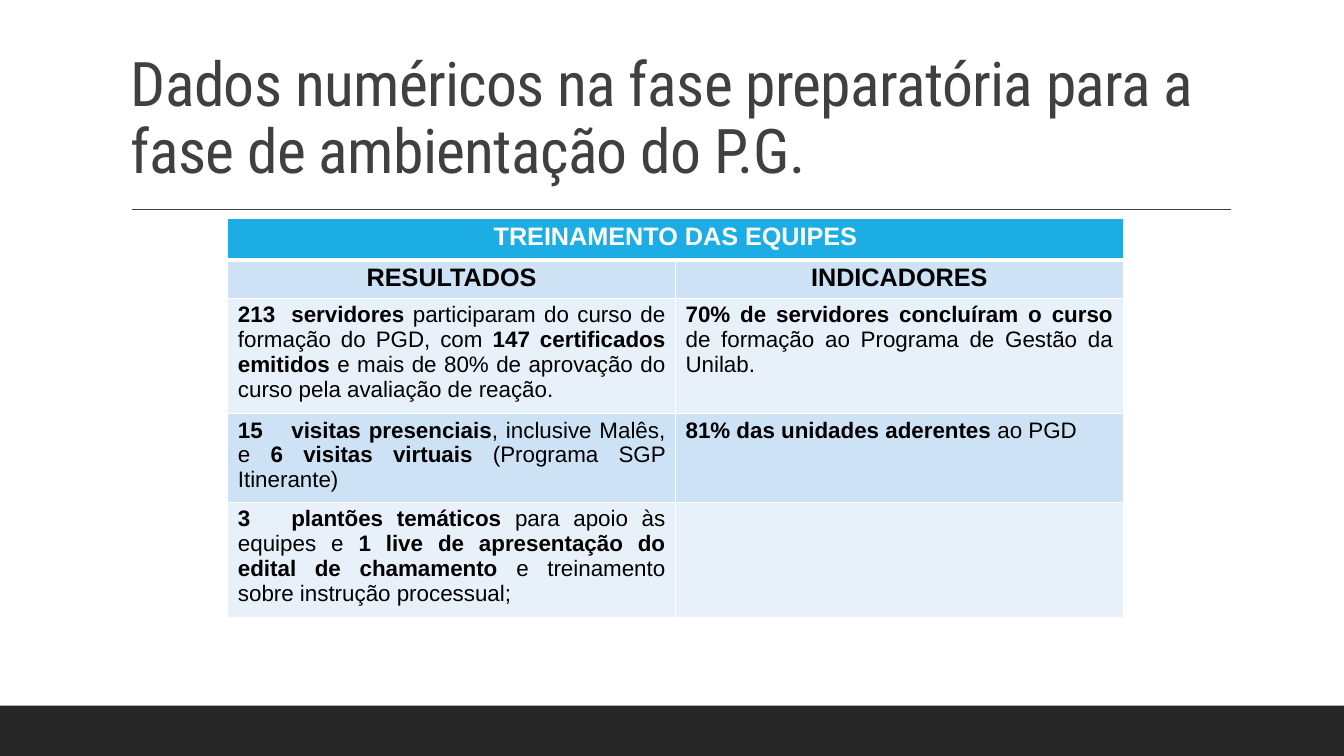
from lxml import etree
from pptx import Presentation
from pptx.dml.color import RGBColor
from pptx.enum.shapes import MSO_CONNECTOR, MSO_SHAPE
from pptx.enum.text import MSO_ANCHOR, PP_ALIGN
from pptx.oxml.ns import qn
from pptx.util import Inches, Pt


def color(value):
    return RGBColor.from_string(value)


def write_runs(paragraph, runs, size, font_color, name="Arial"):
    for text, bold in runs:
        run = paragraph.add_run()
        run.text = text
        style = {"name": name, "size": Pt(size), "bold": bold}
        for attribute, value in style.items():
            setattr(run.font, attribute, value)
        run.font.color.rgb = color(font_color)


presentation = Presentation()
presentation.slide_width = Inches(13.33)
presentation.slide_height = Inches(7.5)
slide = presentation.slides.add_slide(presentation.slide_layouts[6])

footer = slide.shapes.add_shape(
    MSO_SHAPE.RECTANGLE, Inches(0), Inches(7), Inches(13.33), Inches(0.5))
footer.shadow.inherit = False
footer.fill.solid()
footer.fill.fore_color.rgb = color("262626")
footer.line.fill.background()

rule = slide.shapes.add_connector(
    MSO_CONNECTOR.STRAIGHT, Inches(1.31), Inches(2.08), Inches(12.21), Inches(2.08))
rule.line.color.rgb = color("404040")
rule.line.width = Pt(1)
etree.SubElement(rule._element.spPr, qn("a:effectLst"))

title = slide.shapes.add_textbox(Inches(1.2), Inches(0.31), Inches(11), Inches(1.59))
title.text_frame.word_wrap = True
title.text_frame.vertical_anchor = MSO_ANCHOR.BOTTOM
paragraph = title.text_frame.paragraphs[0]
paragraph.line_spacing = 0.9
write_runs(
    paragraph,
    [("Dados numéricos na fase preparatória para a fase de ambientação do P.G.", False)],
    44, "404040", "Roboto Condensed")
paragraph.runs[0].font._element.set("spc", "-50")

rows = [
    [[("TREINAMENTO DAS EQUIPES", True)], []],
    [[("RESULTADOS", True)], [("INDICADORES", True)]],
    [[("213\tservidores ", True),
      ("participaram do curso de formação do PGD, com ", False),
      ("147 certificados emitidos ", True),
      ("e mais de 80% de aprovação do curso pela avaliação de reação.", False)],
     [("70% de servidores concluíram o curso ", True),
      ("de formação ao Programa de Gestão da Unilab.", False)]],
    [[("15\tvisitas presenciais", True),
      (", inclusive Malês, e ", False),
      ("6 visitas virtuais ", True),
      ("(Programa SGP Itinerante)", False)],
     [("81% das unidades aderentes ", True), ("ao PGD", False)]],
    [[("3\tplantões temáticos ", True),
      ("para apoio às equipes e ", False),
      ("1 live de apresentação do edital de chamamento", True),
      (" e treinamento sobre instrução processual;", False)],
     []],
]
row_heights = [0.41, 0.37, 1.09, 0.84, 1.09]
row_fills = ["1CADE4", "CDE3F5", "E8F1FA", "CDE3F5", "E8F1FA"]

table = slide.shapes.add_table(
    len(rows), 2, Inches(2.26), Inches(2.17), Inches(8.88), Inches(sum(row_heights))).table
for column in table.columns:
    column.width = Inches(4.44)
table.cell(0, 0).merge(table.cell(0, 1))

for row_index, row in enumerate(rows):
    table.rows[row_index].height = Inches(row_heights[row_index])
    heading = row_index < 2
    for column_index, runs in enumerate(row):
        cell = table.cell(row_index, column_index)
        cell.margin_top = cell.margin_bottom = Inches(0.04)
        properties = cell._tc.get_or_add_tcPr()
        for side in ("L", "R", "T", "B"):
            thick = (row_index, side) in ((0, "B"), (1, "T"))
            border = etree.SubElement(
                properties, qn(f"a:ln{side}"), w=str(Pt(3 if thick else 1)))
            border_fill = etree.SubElement(border, qn("a:solidFill"))
            etree.SubElement(border_fill, qn("a:srgbClr"), val="FFFFFF")
        cell.fill.solid()
        cell.fill.fore_color.rgb = color(row_fills[row_index])
        paragraph = cell.text_frame.paragraphs[0]
        paragraph.alignment = PP_ALIGN.CENTER if heading else PP_ALIGN.JUSTIFY
        if not heading and column_index == 0:
            tabs = etree.SubElement(paragraph._p.get_or_add_pPr(), qn("a:tabLst"))
            etree.SubElement(tabs, qn("a:tab"), pos=str(Inches(0.53)), algn="l")
        write_runs(paragraph, runs, 18 if heading else 16,
                   "FFFFFF" if row_index == 0 else "000000")

presentation.save("out.pptx")
